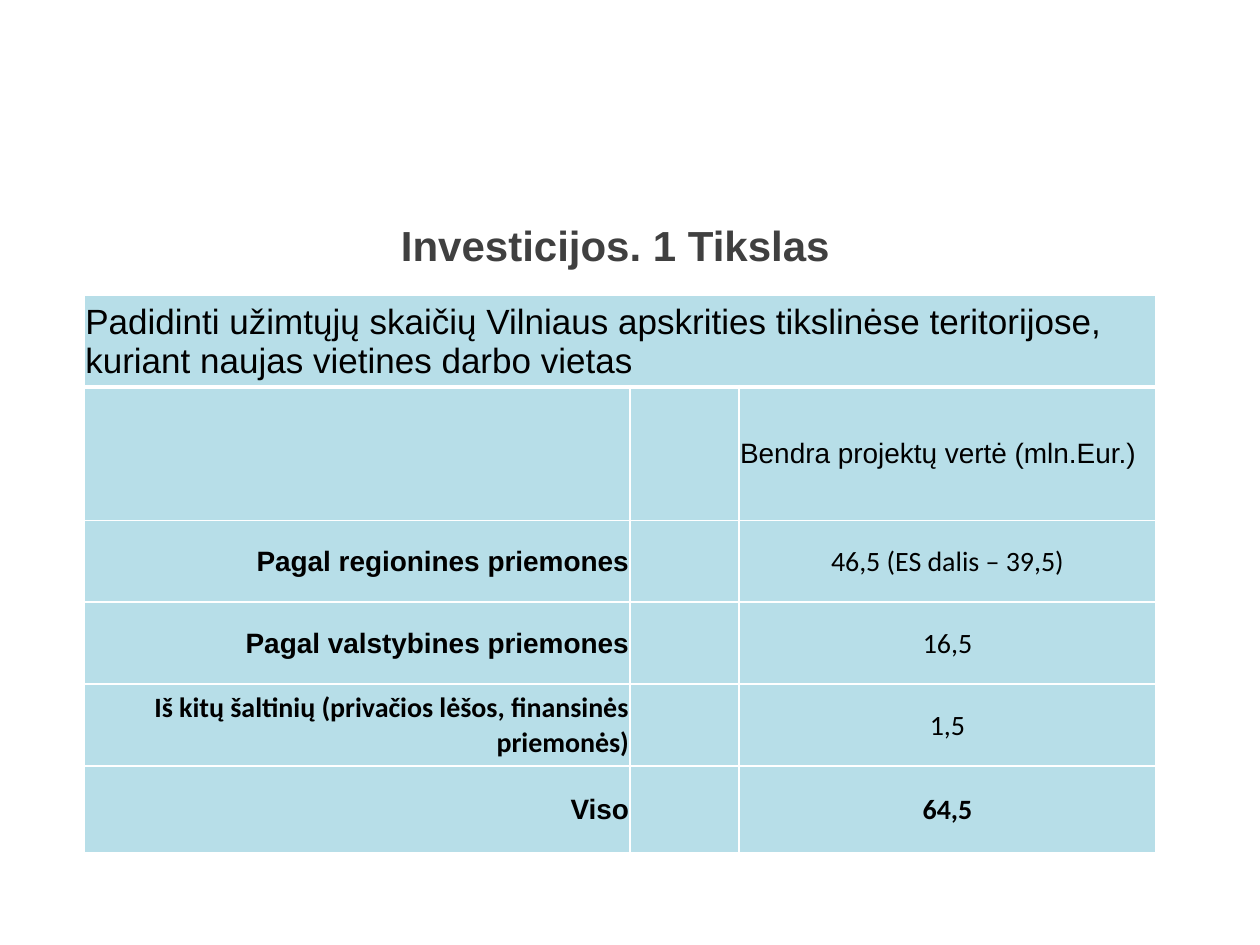
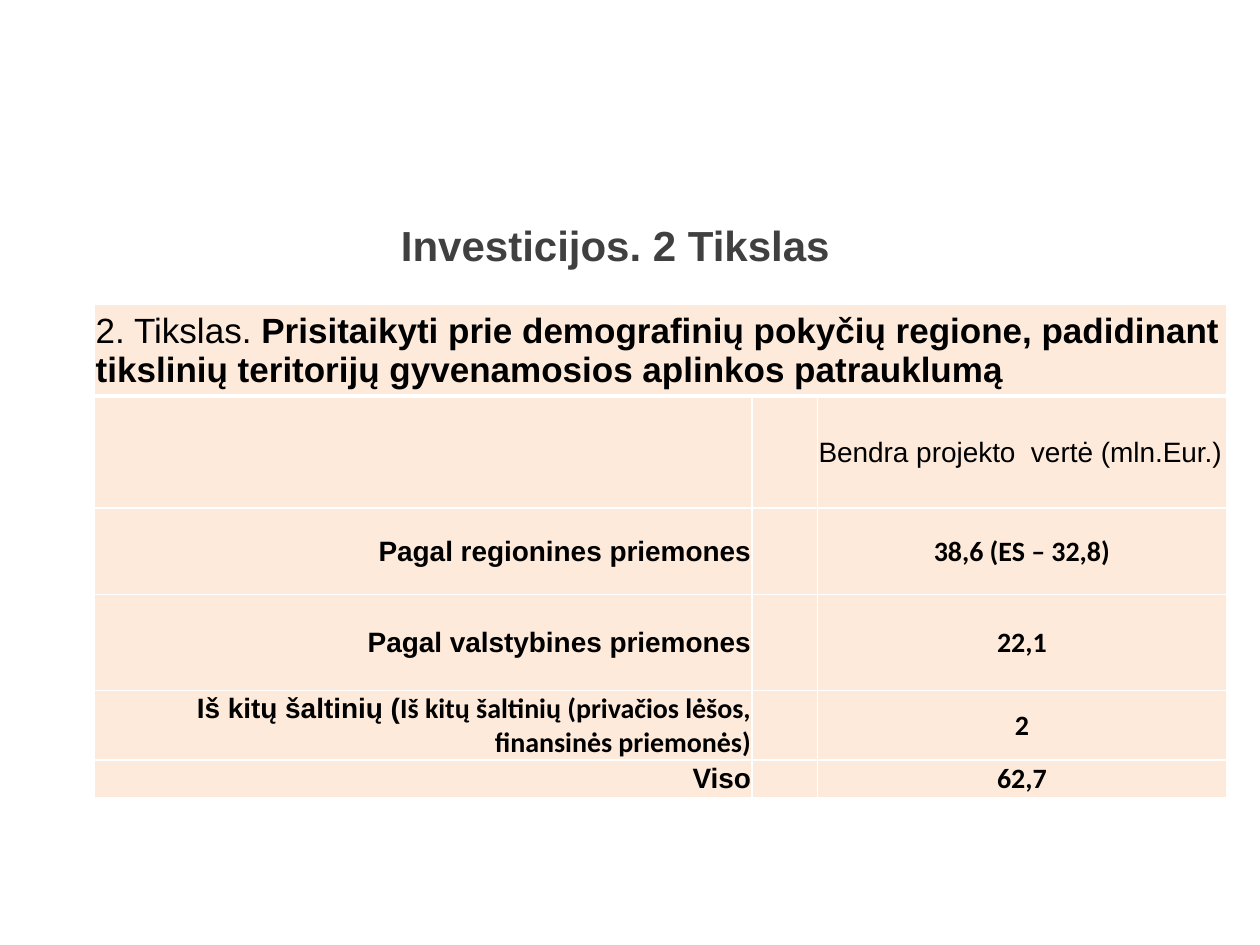
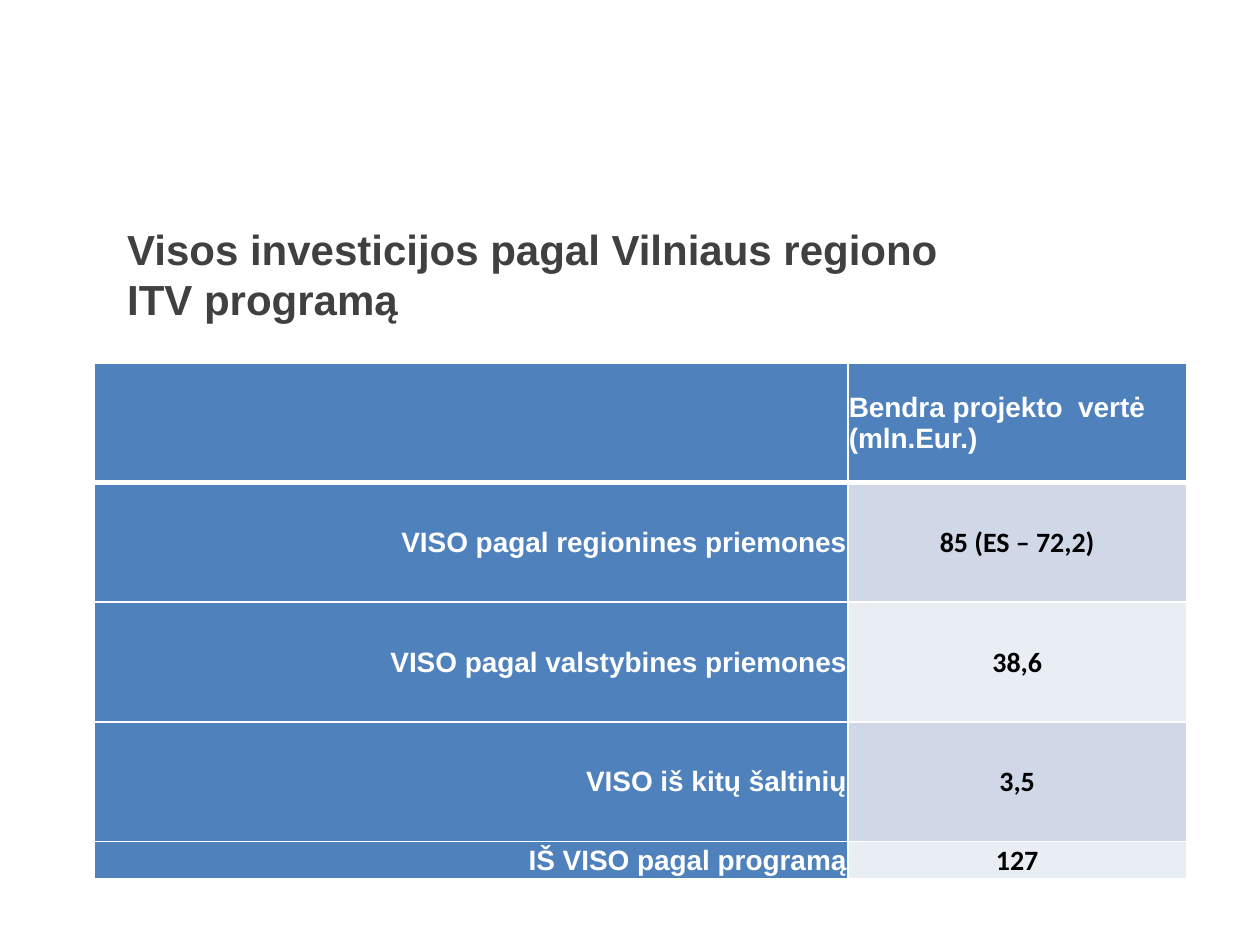
from dataclasses import dataclass
from typing import Optional

from lxml import etree
from pptx import Presentation
from pptx.dml.color import RGBColor
from pptx.enum import text
from pptx.oxml import ns
from pptx.util import Cm, Pt

# Shared look
WHITE = RGBColor(0xFF, 0xFF, 0xFF)
BLACK = RGBColor(0x00, 0x00, 0x00)
TITLE_GREY = RGBColor(0x40, 0x40, 0x40)
AQUA = RGBColor(0xB7, 0xDE, 0xE8)
PEACH = RGBColor(0xFD, 0xEA, 0xDA)
BLUE = RGBColor(0x4F, 0x81, 0xBD)
BAND_DARK = RGBColor(0xD0, 0xD8, 0xE8)
BAND_LIGHT = RGBColor(0xE9, 0xED, 0xF4)

LABEL_FONT, VALUE_FONT = "Arial", "Calibri"
TITLE_SIZE, GOAL_SIZE, BODY_SIZE = 24, 20, 16
THIN, THICK = 1, 3
INSET = Cm(0.02)
LEFT, CENTER, RIGHT = (
    text.PP_ALIGN.LEFT, text.PP_ALIGN.CENTER, text.PP_ALIGN.RIGHT)


@dataclass
class Span:
    text: str
    font: str = LABEL_FONT
    bold: bool = True


@dataclass
class Entry:
    """One table row: a label on the left and its value on the right."""
    label: list[Span]
    value: Span


@dataclass
class Investment:
    title: str
    title_box: tuple[float, float, float, float]
    title_align: text.PP_ALIGN
    corner: tuple[float, float]
    columns: list[float]
    rows: list[float]
    label_fill: RGBColor
    value_fills: list[RGBColor]
    text_color: RGBColor
    heading: Span
    entries: list[Entry]
    goal: Optional[list[Span]] = None


def entry(label: str, value: str, *, label_font: str = LABEL_FONT,
          bold: bool = True) -> Entry:
    return Entry([Span(label, label_font)], Span(value, VALUE_FONT, bold))


def write(frame, spans: list[Span], *, size: float, color: RGBColor,
          align: text.PP_ALIGN = LEFT) -> None:
    """Fill the first paragraph of a text frame with formatted runs."""
    paragraph = frame.paragraphs[0]
    paragraph.alignment = align
    for span in spans:
        run = paragraph.add_run()
        run.text = span.text
        run.font.name = span.font
        run.font.size = Pt(size)
        run.font.bold = span.bold
        run.font.color.rgb = color


def set_borders(cell, *, top: float = THIN, bottom: float = THIN) -> None:
    properties = cell._tc.get_or_add_tcPr()
    widths = {"lnL": THIN, "lnR": THIN, "lnT": top, "lnB": bottom}
    for position, (side, width) in enumerate(widths.items()):
        line = etree.Element(ns.qn(f"a:{side}"), w=str(Pt(width)))
        fill = etree.SubElement(line, ns.qn("a:solidFill"))
        etree.SubElement(fill, ns.qn("a:srgbClr"), val=str(WHITE))
        properties.insert(position, line)


def style_cell(cell, fill: RGBColor, row: int) -> None:
    cell.fill.solid()
    cell.fill.fore_color.rgb = fill
    cell.vertical_anchor = text.MSO_ANCHOR.MIDDLE
    cell.margin_left = cell.margin_top = cell.margin_right = INSET
    cell.margin_bottom = 0
    set_borders(cell, top=THICK if row == 1 else THIN,
                bottom=THICK if row == 0 else THIN)
    # Keeps empty cells from stretching low rows
    etree.SubElement(cell.text_frame.paragraphs[0]._p,
                     ns.qn("a:endParaRPr"), sz=str(BODY_SIZE * 100))


def add_title(slide, investment: Investment) -> None:
    title = slide.shapes.title
    title.left, title.top, title.width, title.height = map(
        Cm, investment.title_box)
    frame = title.text_frame
    frame.word_wrap = True
    frame.auto_size = text.MSO_AUTO_SIZE.NONE
    frame.vertical_anchor = text.MSO_ANCHOR.MIDDLE
    write(frame, [Span(investment.title)], size=TITLE_SIZE, color=TITLE_GREY,
          align=investment.title_align)


def add_investment_table(slide, investment: Investment) -> None:
    left, top = investment.corner
    columns, rows = investment.columns, investment.rows
    table = slide.shapes.add_table(
        len(rows), len(columns), Cm(left), Cm(top),
        Cm(sum(columns)), Cm(sum(rows))).table
    table.first_row = table.horz_banding = False
    for column, width in zip(table.columns, columns):
        column.width = Cm(width)
    for row, height in zip(table.rows, rows):
        row.height = Cm(height)

    # Fills and borders
    last = len(columns) - 1
    heading_row = 1 if investment.goal else 0
    fills = investment.value_fills
    for row in range(len(rows)):
        for column in range(len(columns)):
            is_value = column == last and row > heading_row
            fill = (fills[(row - heading_row - 1) % len(fills)] if is_value
                    else investment.label_fill)
            style_cell(table.cell(row, column), fill, row)

    # Goal and column heading
    color = investment.text_color
    if investment.goal:
        goal_cell = table.cell(0, 0)
        goal_cell.merge(table.cell(0, last))
        write(goal_cell.text_frame, investment.goal, size=GOAL_SIZE,
              color=color)
    write(table.cell(heading_row, last).text_frame, [investment.heading],
          size=BODY_SIZE, color=color)

    # Labels and values
    for row, item in enumerate(investment.entries, heading_row + 1):
        write(table.cell(row, 0).text_frame, item.label, size=BODY_SIZE,
              color=color, align=RIGHT)
        write(table.cell(row, last).text_frame, [item.value], size=BODY_SIZE,
              color=BLACK, align=CENTER)


# Content
GOAL_TITLE_BOX = (1.7, 3.73, 21.41, 2.39)
REGIONAL, NATIONAL = "Pagal regionines priemones", "Pagal valstybines priemones"
OTHER = "Iš kitų šaltinių (privačios lėšos, finansinės priemonės)"
PROJECT_VALUE = "Bendra projekto  vertė (mln.Eur.)"

INVESTMENTS = [
    Investment(
        title="Investicijos. 1 Tikslas",
        title_box=GOAL_TITLE_BOX,
        title_align=CENTER,
        corner=(1.7, 5.95),
        columns=[11, 2.2, 8.4],
        rows=[1.85, 2.69, 1.65, 1.65, 1.65, 1.75],
        label_fill=AQUA,
        value_fills=[AQUA],
        text_color=BLACK,
        goal=[Span("Padidinti užimtųjų skaičių Vilniaus apskrities tikslinėse "
                   "teritorijose, kuriant naujas vietines darbo vietas",
                   bold=False)],
        heading=Span("Bendra projektų vertė (mln.Eur.)", bold=False),
        entries=[
            entry(REGIONAL, "46,5 (ES dalis – 39,5)", bold=False),
            entry(NATIONAL, "16,5", bold=False),
            entry(OTHER, "1,5", label_font=VALUE_FONT, bold=False),
            entry("Viso", "64,5"),
        ],
    ),
    Investment(
        title="Investicijos. 2 Tikslas",
        title_box=GOAL_TITLE_BOX,
        title_align=CENTER,
        corner=(1.91, 6.13),
        columns=[13.25, 1.32, 8.24],
        rows=[1.85, 2.26, 1.75, 1.93, 1.3, 0.76],
        label_fill=PEACH,
        value_fills=[PEACH],
        text_color=BLACK,
        goal=[Span("2. Tikslas. ", bold=False),
              Span("Prisitaikyti prie demografinių pokyčių regione, padidinant "
                   "tikslinių teritorijų gyvenamosios aplinkos patrauklumą")],
        heading=Span(PROJECT_VALUE, bold=False),
        entries=[
            entry(REGIONAL, "38,6 (ES – 32,8)"),
            entry(NATIONAL, "22,1"),
            Entry([Span("Iš kitų šaltinių ("), Span(OTHER, VALUE_FONT)],
                  Span("2", VALUE_FONT)),
            entry("Viso", "62,7"),
        ],
    ),
    Investment(
        title="Visos investicijos pagal Vilniaus regiono ITV programą",
        title_box=(2.31, 4.32, 18.21, 2.39),
        title_align=LEFT,
        corner=(1.91, 7.32),
        columns=[15.18, 6.83],
        rows=[2.41] * 4 + [0.76],
        label_fill=BLUE,
        value_fills=[BAND_DARK, BAND_LIGHT],
        text_color=WHITE,
        heading=Span(PROJECT_VALUE),
        entries=[
            entry("VISO pagal regionines priemones", "85 (ES – 72,2)"),
            entry("VISO pagal valstybines priemones", "38,6"),
            entry("VISO iš kitų šaltinių", "3,5"),
            entry("IŠ VISO pagal programą", "127"),
        ],
    ),
]


def main() -> None:
    presentation = Presentation()
    presentation.slide_width, presentation.slide_height = Cm(25.4), Cm(19.05)
    title_only = presentation.slide_layouts[5]
    for investment in INVESTMENTS:
        slide = presentation.slides.add_slide(title_only)
        add_title(slide, investment)
        add_investment_table(slide, investment)
    presentation.save("out.pptx")


if __name__ == "__main__":
    main()
